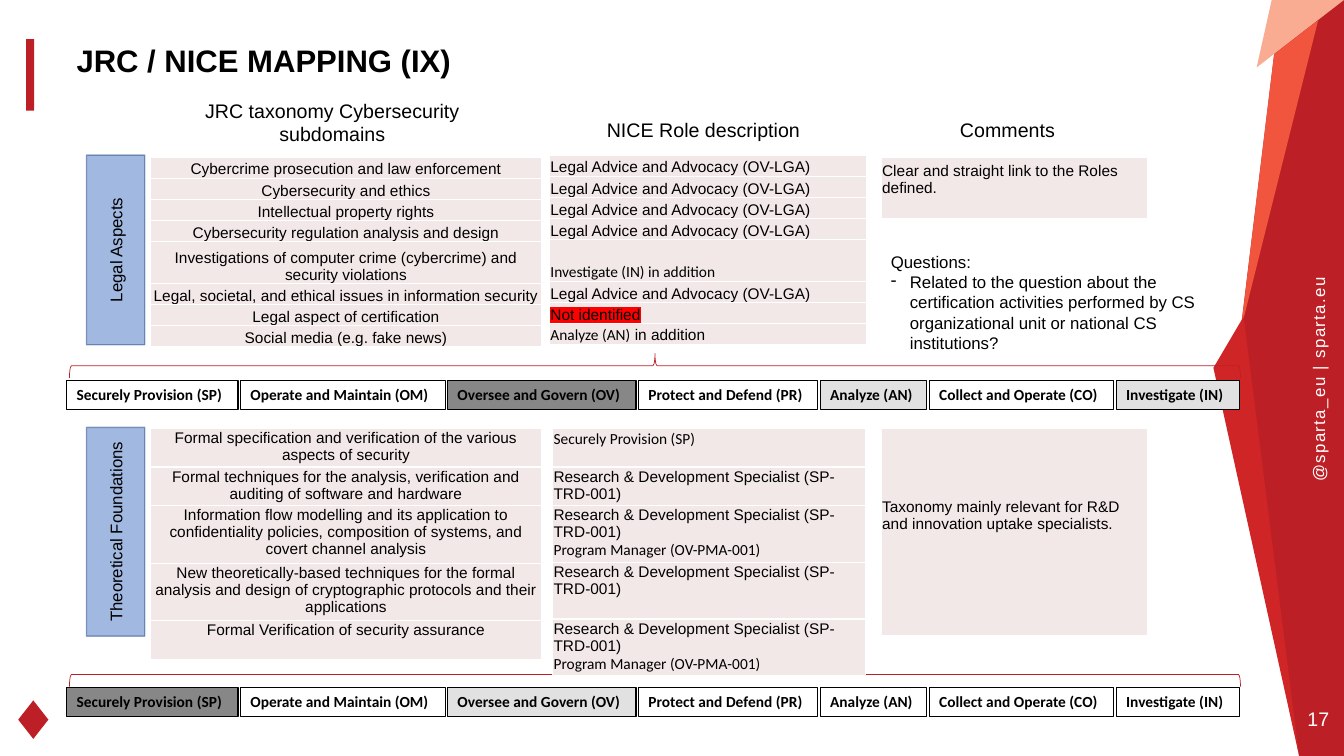
import pptx
import pptx.dml.color
import pptx.enum.shapes
import pptx.enum.text
import pptx.oxml.ns
import pptx.util
from lxml import etree

Cm = pptx.util.Cm
RGBColor = pptx.dml.color.RGBColor
ALIGN = pptx.enum.text.PP_ALIGN
ANCHOR = pptx.enum.text.MSO_ANCHOR
SHAPE = pptx.enum.shapes.MSO_SHAPE
qn = pptx.oxml.ns.qn

BLACK = RGBColor(0x00, 0x00, 0x00)
WHITE = RGBColor(0xFF, 0xFF, 0xFF)
CRIMSON = RGBColor(0xBC, 0x20, 0x26)
RED = RGBColor(0xD0, 0x25, 0x27)
ORANGE = RGBColor(0xF1, 0x55, 0x3D)
PEACH = RGBColor(0xF9, 0xAC, 0x91)
BLUE = RGBColor(0x44, 0x72, 0xC4)
NAVY = RGBColor(0x2F, 0x52, 0x8F)
PINK = RGBColor(0xF3, 0xE8, 0xE8)
DARK_GREY = RGBColor(0x87, 0x87, 0x87)
LIGHT_GREY = RGBColor(0xE1, 0xE1, 0xE1)
HIGHLIGHT = RGBColor(0xFF, 0x00, 0x00)

CALIBRI_LINES = ["Securely Provision (SP)", "Program Manager (OV-PMA-001)",
                 "Investigate (IN) in addition"]

presentation = pptx.Presentation()
presentation.slide_width = Cm(33.87)
presentation.slide_height = Cm(19.05)
slide = presentation.slides.add_slide(presentation.slide_layouts[6])
shapes = slide.shapes


def write_text(frame, text, size, alignment=ALIGN.LEFT, color=BLACK, bold=False):
    frame.text = text
    for paragraph in frame.paragraphs:
        paragraph.alignment = alignment
        paragraph.font.size = pptx.util.Pt(size)
        paragraph.font.bold = bold
        paragraph.font.color.rgb = color
        paragraph.font.name = "Calibri" if paragraph.text in CALIBRI_LINES else "Arial"


def add_column(left, top, width, heights, texts, alignment=ALIGN.LEFT,
               anchor=ANCHOR.BOTTOM, bottom_margin=0):
    table = shapes.add_table(len(texts), 1, Cm(left), Cm(top), Cm(width),
                             Cm(sum(heights))).table
    table.first_row = False
    table.horz_banding = False
    for row, height, text in zip(table.rows, heights, texts):
        row.height = Cm(height)
        cell = row.cells[0]
        cell.margin_left = cell.margin_right = cell.margin_top = Cm(0.03)
        cell.margin_bottom = Cm(bottom_margin)
        cell.vertical_anchor = anchor
        write_text(cell.text_frame, text, 11, alignment)
        properties = cell._tc.get_or_add_tcPr()
        for side in ("a:lnL", "a:lnR", "a:lnT", "a:lnB"):
            border = etree.SubElement(properties, qn(side), w="12700")
            border_fill = etree.SubElement(border, qn("a:solidFill"))
            etree.SubElement(border_fill, qn("a:srgbClr"), val=str(WHITE))
        cell.fill.solid()
        cell.fill.fore_color.rgb = PINK
    return table


ribbons = [
    (CRIMSON, [(33.87, 0), (33.87, 19.05), (32.74, 19.05), (31.06, 10.01),
               (32.11, 1.37), (32.41, 0)]),
    (PEACH, [(33.87, 0), (31.67, 1.7), (32.05, 0)]),
    (ORANGE, [(33.22, 0.51), (31.27, 8.31), (32.11, 1.37)]),
    (RED, [(31.34, 7.98), (32.74, 19.05), (30.58, 9.27)]),
]
for color, corners in ribbons:
    points = [(Cm(x), Cm(y)) for x, y in corners]
    builder = shapes.build_freeform(*points[0])
    builder.add_line_segments(points[1:])
    ribbon = builder.convert_to_shape()
    ribbon.shadow.inherit = False
    ribbon.fill.solid()
    ribbon.fill.fore_color.rgb = color
    ribbon.line.fill.background()

for kind, left, top, width, height in [(SHAPE.RECTANGLE, 0.66, 0.99, 0.2, 1.8),
                                       (SHAPE.DIAMOND, 0.46, 17.65, 0.76, 0.97)]:
    accent = shapes.add_shape(kind, Cm(left), Cm(top), Cm(width), Cm(height))
    accent.shadow.inherit = False
    accent.fill.solid()
    accent.fill.fore_color.rgb = CRIMSON
    accent.line.fill.background()

margin_texts = [
    ("@sparta_eu | sparta.eu", 30.61, 9.27, 5.23, 0.51, 12, ALIGN.LEFT, 270),
    ("17", 32.92, 17.81, 0.61, 0.61, 14, ALIGN.CENTER, 0),
]
for text, left, top, width, height, size, alignment, rotation in margin_texts:
    box = shapes.add_textbox(Cm(left), Cm(top), Cm(width), Cm(height))
    box.rotation = rotation
    frame = box.text_frame
    frame.margin_left = frame.margin_right = frame.margin_top = frame.margin_bottom = 0
    frame.vertical_anchor = ANCHOR.MIDDLE
    frame.word_wrap = False
    write_text(frame, text, size, alignment, WHITE)
    if rotation:
        frame.paragraphs[0].runs[0].font._element.set("spc", "100")

headings = [
    ("JRC taxonomy Cybersecurity subdomains", 4.88, 2.36, 6.99, 1.45),
    ("NICE Role description", 14.86, 2.84, 5.74, 0.86),
    ("Comments", 21.44, 2.84, 7.9, 0.86),
]
for text, left, top, width, height in headings:
    heading = shapes.add_textbox(Cm(left), Cm(top), Cm(width), Cm(height))
    heading.text_frame.word_wrap = True
    write_text(heading.text_frame, text, 14, ALIGN.CENTER)

for text, top, height in [("Legal Aspects", 3.91, 4.78),
                          ("Theoretical Foundations", 10.77, 5.26)]:
    domain = shapes.add_shape(SHAPE.RECTANGLE, Cm(2.18), Cm(top), Cm(1.47), Cm(height))
    domain.shadow.inherit = False
    domain.fill.solid()
    domain.fill.fore_color.rgb = BLUE
    domain.line.color.rgb = NAVY
    domain.line.width = pptx.util.Pt(1)
    for color_element in domain._element.spPr.iter(qn("a:srgbClr")):
        etree.SubElement(color_element, qn("a:alpha"), val="50000")
    domain.text_frame.vertical_anchor = ANCHOR.MIDDLE
    domain.text_frame._txBody.bodyPr.set("vert", "vert270")
    write_text(domain.text_frame, text, 12, ALIGN.CENTER)

categories = [
    ("Securely Provision (SP)", 4.32), ("Operate and Maintain (OM)", 5.16),
    ("Oversee and Govern (OV)", 4.75), ("Protect and Defend (PR)", 4.52),
    ("Analyze (AN)", 2.69), ("Collect and Operate (CO)", 4.65),
    ("Investigate (IN)", 3.1),
]
bands = [
    (9.58, -5.54, {"Oversee and Govern (OV)": DARK_GREY, "Analyze (AN)": LIGHT_GREY,
                   "Investigate (IN)": LIGHT_GREY}),
    (17.32, 2.24, {"Securely Provision (SP)": DARK_GREY,
                   "Oversee and Govern (OV)": LIGHT_GREY}),
]
for top, brace_top, fills in bands:
    left = 1.68
    for text, width in categories:
        category = shapes.add_shape(SHAPE.RECTANGLE, Cm(left), Cm(top), Cm(width), Cm(0.74))
        left += width + 0.06
        category.shadow.inherit = False
        category.line.color.rgb = BLACK
        category.line.width = pptx.util.Pt(0.75)
        if text in fills:
            category.fill.solid()
            category.fill.fore_color.rgb = fills[text]
        else:
            category.fill.background()
        category.text_frame.word_wrap = False
        category.text_frame.vertical_anchor = ANCHOR.TOP
        write_text(category.text_frame, text, 11, bold=True)
        category.text_frame.paragraphs[0].font.name = "Calibri"
    brace = shapes.add_shape(SHAPE.LEFT_BRACE, Cm(16.2), Cm(brace_top), Cm(0.61), Cm(29.51))
    brace.rotation = 90
    brace.shadow.inherit = False
    brace.fill.background()
    brace.line.color.rgb = CRIMSON
    brace.line.width = pptx.util.Pt(0.5)

advice = "Legal Advice and Advocacy (OV-LGA)"
research = "Research & Development Specialist (SP-TRD-001)"
manager = "Program Manager (OV-PMA-001)"
legal_heights = [0.53] * 4 + [1.07] + [0.53] * 3

add_column(3.78, 3.96, 9.88, legal_heights, [
    "Cybercrime prosecution and law enforcement",
    "Cybersecurity and ethics",
    "Intellectual property rights",
    "Cybersecurity regulation analysis and design",
    "Investigations of computer crime (cybercrime) and security violations",
    "Legal, societal, and ethical issues in information security",
    "Legal aspect of certification",
    "Social media (e.g. fake news)",
], ALIGN.CENTER)
legal_roles = add_column(13.84, 3.91, 8, legal_heights, [
    advice, advice, advice, advice, "Investigate (IN) in addition", advice,
    "Not identified", "Analyze (AN)",
])
missing_run = legal_roles.cell(6, 0).text_frame.paragraphs[0].runs[0]
highlight = etree.SubElement(missing_run.font._element, qn("a:highlight"))
etree.SubElement(highlight, qn("a:srgbClr"), val=str(HIGHLIGHT))
analyze = legal_roles.cell(7, 0).text_frame.paragraphs[0]
analyze.runs[0].font.name = "Calibri"
analyze.add_run().text = " in addition"

add_column(3.78, 10.8, 9.88, [0.97, 0.97, 1.45, 1.45, 0.97], [
    "Formal specification and verification of the various aspects of security",
    "Formal techniques for the analysis, verification and auditing of software and hardware",
    "Information flow modelling and its application to confidentiality policies, "
    "composition of systems, and covert channel analysis",
    "New theoretically-based techniques for the formal analysis and design of "
    "cryptographic protocols and their applications",
    "Formal Verification of security assurance",
], ALIGN.CENTER, ANCHOR.TOP)
add_column(13.92, 10.8, 7.9, [0.97, 0.97, 1.43, 1.43, 1.43], [
    "Securely Provision (SP)", research, research + "\n" + manager, research,
    research + "\n" + manager,
], anchor=ANCHOR.TOP)
add_column(22.2, 3.96, 6.73, [1.55], ["Clear and straight link to the Roles defined."],
           anchor=ANCHOR.MIDDLE, bottom_margin=0.43)
add_column(22.2, 10.8, 6.73, [5.21],
           ["Taxonomy mainly relevant for R&D and innovation uptake specialists."],
           anchor=ANCHOR.MIDDLE, bottom_margin=0.86)

questions = shapes.add_textbox(Cm(22.2), Cm(6.22), Cm(8.74), Cm(2.82)).text_frame
questions.word_wrap = True
questions.text = "Questions:\nRelated to the question about the certification activities " \
                 "performed by CS organizational unit or national CS institutions?"
bullet_properties = questions.paragraphs[1]._p.get_or_add_pPr()
bullet_properties.set("marL", str(Cm(0.48)))
bullet_properties.set("indent", str(-Cm(0.48)))
etree.SubElement(bullet_properties, qn("a:buChar"), char="-")
for paragraph in questions.paragraphs:
    paragraph.font.size = pptx.util.Pt(12)
    paragraph.font.name = "Arial"
    paragraph.font.color.rgb = BLACK

title = shapes.add_textbox(Cm(1.68), Cm(1.04), Cm(28.8), Cm(1.07)).text_frame
title.word_wrap = True
title.vertical_anchor = ANCHOR.BOTTOM
write_text(title, "JRC / NICE MAPPING (IX)", 22.2, bold=True)
title.paragraphs[0].line_spacing = 0.8

presentation.save("out.pptx")
